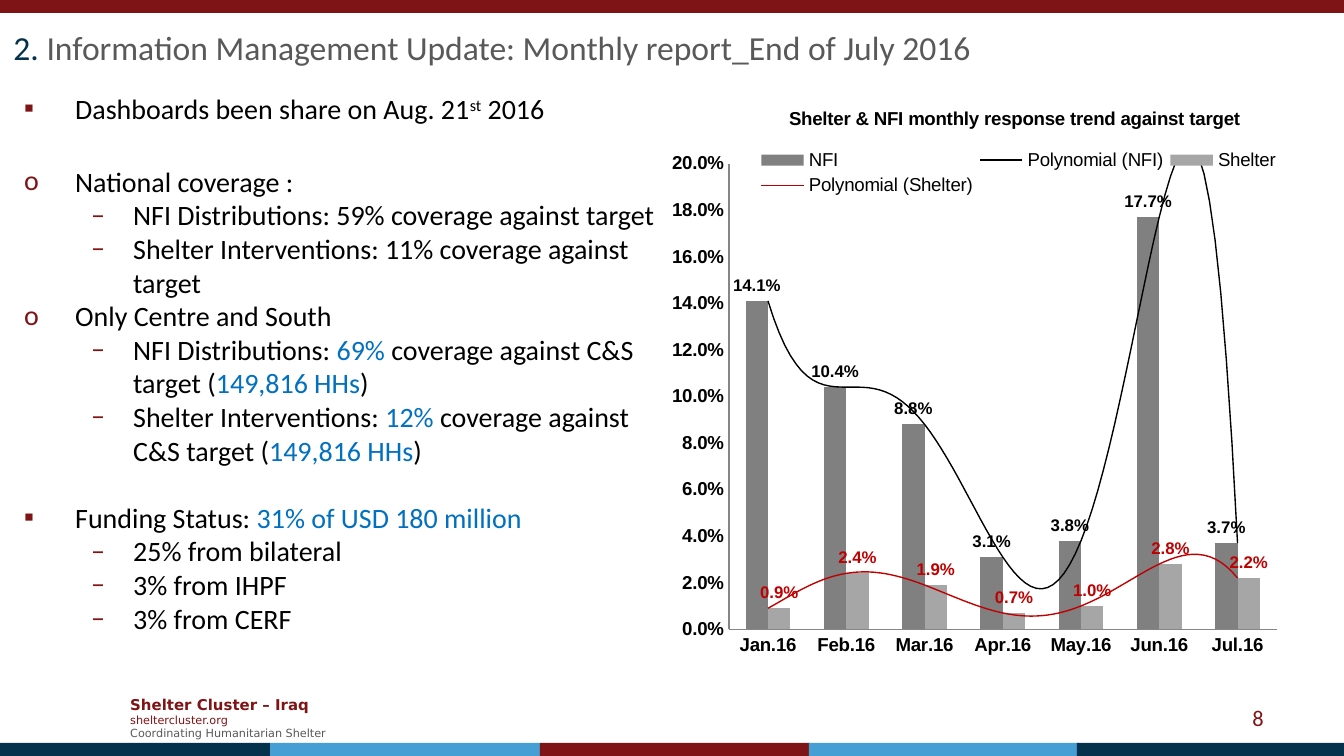
from lxml import etree
from pptx import Presentation
from pptx.chart.data import CategoryChartData
from pptx.dml.color import RGBColor
from pptx.enum.chart import XL_CHART_TYPE, XL_LABEL_POSITION, XL_LEGEND_POSITION, XL_TICK_MARK
from pptx.enum.shapes import MSO_SHAPE
from pptx.enum.text import MSO_ANCHOR, MSO_AUTO_SIZE, PP_ALIGN
from pptx.oxml import parse_xml
from pptx.oxml.ns import nsdecls, qn
from pptx.util import Pt

COLUMNS = XL_CHART_TYPE.COLUMN_CLUSTERED
OUTSIDE = XL_LABEL_POSITION.OUTSIDE_END
LEGEND_RIGHT = XL_LEGEND_POSITION.RIGHT
NO_TICKS = XL_TICK_MARK.NONE
RECT = MSO_SHAPE.RECTANGLE
TOP, MIDDLE = MSO_ANCHOR.TOP, MSO_ANCHOR.MIDDLE
LEFT, RIGHT = PP_ALIGN.LEFT, PP_ALIGN.RIGHT
NO_FIT = MSO_AUTO_SIZE.NONE

EMU_PER_PX = 914400 / 134.4
WIDTH, HEIGHT = 1344, 756
COLORS = {
    "maroon": "7F1416", "navy": "04314C", "sky": "459FD5", "grey": "595959",
    "blue": "0070C0", "black": "000000", "red": "C00000",
    "nfi": "808080", "shelter": "A6A6A6", "axis": "868686",
}
PERCENT = "0.0%"

# Level: left margin and hanging indent in px
INDENTS = [(51, 51), (109, 42)]

# Level, bullet, space before in points, runs of (text, style)
BODY = [
    (0, "▪", 0, [("Dashboards been share on Aug. 21", ""), ("st", "super"), (" 2016", "")]),
    (0, "o", 21, [("National coverage :", "")]),
    (1, "–", 0, [("NFI Distributions: 59% coverage against target", "")]),
    (1, "–", 0, [("Shelter Interventions: 11% coverage against target", "")]),
    (0, "o", 0, [("Only Centre and South", "")]),
    (1, "–", 0, [("NFI Distributions: ", ""), ("69%", "blue"),
                 (" coverage against C&S target (", ""), ("149,816 HHs", "blue"), (")", "")]),
    (1, "–", 0, [("Shelter Interventions: ", ""), ("12%", "blue"),
                 (" coverage against C&S target (", ""), ("149,816 HHs", "blue"), (")", "")]),
    (0, "▪", 18, [("Funding Status: ", ""), ("31% of USD 180 million", "blue")]),
    (1, "–", 0, [("25% from bilateral", "")]),
    (1, "–", 0, [("3% from IHPF", "")]),
    (1, "–", 0, [("3% from CERF", "")]),
]

MONTHS = ["Jan.16", "Feb.16", "Mar.16", "Apr.16", "May.16", "Jun.16", "Jul.16"]
# Name, values, bar colour, colour of labels and trend line
SERIES = [
    ("NFI", [0.141, 0.104, 0.088, 0.031, 0.038, 0.177, 0.037], "nfi", "black"),
    ("Shelter", [0.009, 0.024, 0.019, 0.007, 0.01, 0.028, 0.022], "shelter", "red"),
]


def px(n):
    return round(n * EMU_PER_PX)


def box(*lengths):
    return [px(n) for n in lengths]


def rgb(name):
    return RGBColor.from_string(COLORS[name])


def set_font(font, size, color, name="Calibri", bold=False):
    values = {"size": Pt(size), "name": name, "bold": bold}
    for key, value in values.items():
        setattr(font, key, value)
    font.color.rgb = rgb(color)


def set_frame(tf, anchor):
    values = {"word_wrap": True, "auto_size": NO_FIT, "vertical_anchor": anchor}
    for key, value in values.items():
        setattr(tf, key, value)


def add_run(p, text, *font):
    r = p.add_run()
    r.text = text
    set_font(r.font, *font)
    return r


def add_text(s, place, paragraphs, anchor=MIDDLE, align=LEFT):
    """Add a text box; each paragraph is one run given as (text, *font)."""
    tf = s.shapes.add_textbox(*box(*place)).text_frame
    set_frame(tf, anchor)
    for i, run in enumerate(paragraphs):
        p = tf.paragraphs[0] if i == 0 else tf.add_paragraph()
        p.alignment = align
        add_run(p, *run)


def add_band(s, place, color):
    shape = s.shapes.add_shape(RECT, *box(*place))
    shape.shadow.inherit = False
    shape.fill.solid()
    shape.fill.fore_color.rgb = rgb(color)
    shape.line.fill.background()


def add_title(s):
    title = s.shapes.title
    title.left, title.top, title.width, title.height = box(0, 20, WIDTH, 54)
    set_frame(title.text_frame, MIDDLE)
    p = title.text_frame.paragraphs[0]
    p.alignment = LEFT
    add_run(p, "2. ", 18, "navy")
    add_run(p, "Information Management Update: Monthly report_End of July 2016", 18, "grey")


def add_bullet(p, level, char):
    margin, hanging = INDENTS[level]
    pPr = p._p.get_or_add_pPr()
    pPr.set("marL", str(px(margin)))
    pPr.set("indent", str(-px(hanging)))
    color = etree.SubElement(pPr, qn("a:buClr"))
    etree.SubElement(color, qn("a:srgbClr"), val=COLORS["maroon"])
    etree.SubElement(pPr, qn("a:buFont"), typeface="Calibri")
    etree.SubElement(pPr, qn("a:buChar"), char=char)


def add_body(s):
    tf = s.shapes.add_textbox(*box(11, 85, 661, 605)).text_frame
    set_frame(tf, TOP)
    for i, (level, char, space, runs) in enumerate(BODY):
        p = tf.paragraphs[0] if i == 0 else tf.add_paragraph()
        p.level = level
        p.space_before = Pt(space)
        add_bullet(p, level, char)
        for text, style in runs:
            r = add_run(p, text, 15, "blue" if style == "blue" else "black")
            if style == "super":
                r._r.get_or_add_rPr().set("baseline", "30000")


def set_layout(parent, index, inner=False, **fractions):
    """Place a chart part by fractions of the chart; index is its layout's child position."""
    for old in parent.findall(qn("c:layout")):
        parent.remove(old)
    target = '<c:layoutTarget val="inner"/>' if inner else ""
    modes = "".join(f'<c:{k}Mode val="edge"/>' for k in "xy")
    sizes = "".join(f'<c:{k} val="{v}"/>' for k, v in fractions.items())
    parent.insert(index, parse_xml(
        f'<c:layout {nsdecls("c")}><c:manualLayout>{target}{modes}{sizes}'
        '</c:manualLayout></c:layout>'))


def add_trend(series, color):
    trend = parse_xml(
        f'<c:trendline {nsdecls("c", "a")}><c:spPr><a:ln w="{Pt(0.75)}"><a:solidFill>'
        f'<a:srgbClr val="{COLORS[color]}"/></a:solidFill></a:ln></c:spPr>'
        '<c:trendlineType val="poly"/><c:order val="6"/>'
        '<c:dispRSqr val="0"/><c:dispEq val="0"/></c:trendline>')
    series._element.find(qn("c:cat")).addprevious(trend)


def format_axis(axis):
    values = {"major_tick_mark": NO_TICKS, "minor_tick_mark": NO_TICKS,
              "has_major_gridlines": False}
    for key, value in values.items():
        setattr(axis, key, value)
    set_font(axis.tick_labels.font, 10, "black", "Arial", True)
    axis.format.line.color.rgb = rgb("axis")


def format_series(series, color, accent):
    series.format.fill.solid()
    series.format.fill.fore_color.rgb = rgb(color)
    labels = series.data_labels
    values = {"show_value": True, "position": OUTSIDE,
              "number_format": PERCENT, "number_format_is_linked": False}
    for key, value in values.items():
        setattr(labels, key, value)
    set_font(labels.font, 9, accent, "Arial", True)
    add_trend(series, accent)


def add_trend_chart(s):
    data = CategoryChartData(number_format=PERCENT)
    data.categories = MONTHS
    for name, values, *_ in SERIES:
        data.add_series(name, values)
    chart = s.shapes.add_chart(COLUMNS, *box(672, 85, 630, 605), data).chart
    set_font(chart.font, 10, "black", "Arial")

    chart.has_title = True
    add_run(chart.chart_title.text_frame.paragraphs[0],
            "Shelter & NFI monthly response trend against target", 10, "black", "Arial", True)
    chart.has_legend = True
    chart.legend.position = LEGEND_RIGHT
    chart.legend.include_in_layout = True
    set_font(chart.legend.font, 10, "black", "Arial")

    format_axis(chart.category_axis)
    axis = chart.value_axis
    format_axis(axis)
    axis.minimum_scale, axis.maximum_scale, axis.major_unit = 0, 0.2, 0.02
    axis.tick_labels.number_format = PERCENT
    axis.tick_labels.number_format_is_linked = False

    plot = chart.plots[0]
    plot.vary_by_categories = False
    plot.gap_width, plot.overlap = 150, 0
    for series, (_, _, color, accent) in zip(plot.series, SERIES):
        format_series(series, color, accent)

    root = chart.element
    set_layout(root.xpath(".//c:plotArea")[0], 0, inner=True, x=0.09, y=0.13, w=0.87, h=0.77)
    set_layout(root.xpath("./c:chart/c:title")[0], 1, x=0.18, y=0.03)
    set_layout(root.xpath(".//c:legend")[0], 1, x=0.13, y=0.1, w=0.84, h=0.09)


def main():
    prs = Presentation()
    prs.slide_width, prs.slide_height = box(WIDTH, HEIGHT)
    s = prs.slides.add_slide(prs.slide_layouts[5])
    add_text(s, (117, 688, 233, 59), [
        ("Shelter Cluster – Iraq", 8, "maroon", "DejaVu Sans", True),
        ("sheltercluster.org", 6, "maroon", "DejaVu Sans"),
        ("Coordinating Humanitarian Shelter", 6, "grey", "DejaVu Sans")])
    add_band(s, (0, 0, WIDTH, 13), "maroon")
    for left, color in zip((0, 270, 540, 809, 1077), ("navy", "sky", "maroon", "sky", "navy")):
        add_band(s, (left, 743, 270, 13), color)
    add_text(s, (964, 698, 313, 40), [("8", 12, "maroon")], align=RIGHT)
    add_title(s)
    add_body(s)
    add_trend_chart(s)
    prs.save("out.pptx")


if __name__ == "__main__":
    main()
